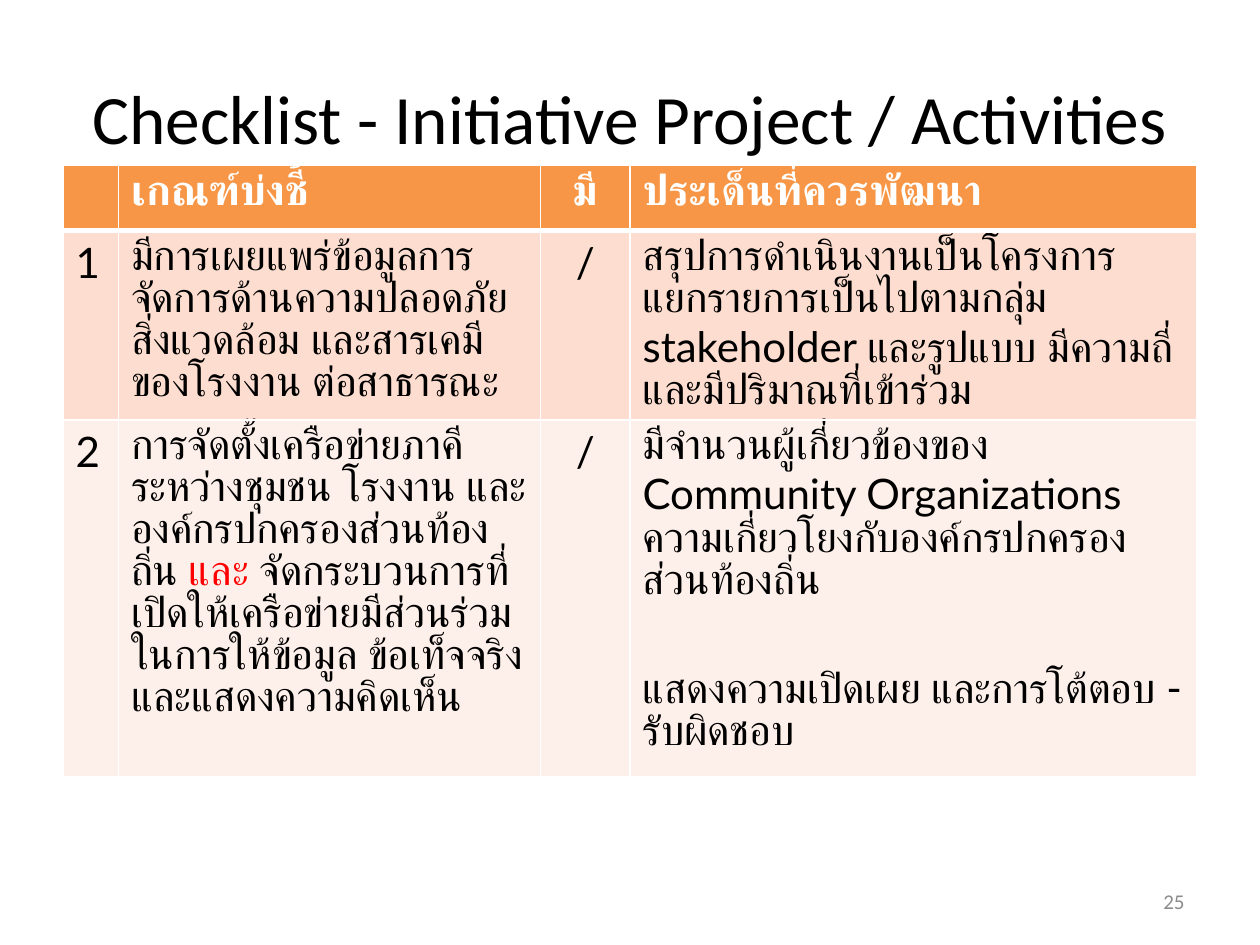
from dataclasses import dataclass

from lxml.etree import SubElement
from pptx import Presentation
from pptx.dml.color import RGBColor
from pptx.enum.text import MSO_ANCHOR, PP_ALIGN
from pptx.oxml.ns import qn
from pptx.util import Cm, Pt


@dataclass(frozen=True)
class Theme:
    heading_font: str = "Calibri"
    table_font: str = "Lato"
    title_size: float = 39.6
    table_size: float = 24
    number_size: float = 12
    paragraph_gap: float = 34
    ink: str = "000000"
    white: str = "FFFFFF"
    accent: str = "FF0000"
    muted: str = "8C8C8C"
    header_fill: str = "F79646"
    row_fills: tuple = ("FCDDCF", "FDEFE9")


class ChecklistSlide:
    def __init__(self, deck, theme):
        self.theme = theme
        self.slide = deck.slides.add_slide(deck.slide_layouts[5])

    def style(self, paragraph, font, size, color, align=PP_ALIGN.LEFT, bold=False):
        paragraph.alignment = align
        paragraph.font.name = font
        paragraph.font.size = Pt(size)
        paragraph.font.bold = bold
        paragraph.font.color.rgb = RGBColor.from_string(color)

    def title(self, wording, left, top, width, height):
        heading = self.slide.shapes.title
        heading.left, heading.top = Cm(left), Cm(top)
        heading.width, heading.height = Cm(width), Cm(height)
        frame = heading.text_frame
        frame.text = wording
        frame.vertical_anchor = MSO_ANCHOR.MIDDLE
        self.style(frame.paragraphs[0], self.theme.heading_font,
                   self.theme.title_size, self.theme.ink, PP_ALIGN.CENTER)

    def borders(self, cell, bottom_width):
        properties = cell._tc.get_or_add_tcPr()
        for side, width in (("L", 1), ("R", 1), ("T", 1), ("B", bottom_width)):
            line = SubElement(properties, qn(f"a:ln{side}"), w=str(Pt(width)))
            fill = SubElement(line, qn("a:solidFill"))
            SubElement(fill, qn("a:srgbClr"), val=self.theme.white)

    def cell(self, cell, paragraphs, fill, color, align, bold, bottom_width):
        """Each paragraph is a list of (wording, own colour or None) runs."""
        self.borders(cell, bottom_width)
        cell.fill.solid()
        cell.fill.fore_color.rgb = RGBColor.from_string(fill)
        frame = cell.text_frame
        for index, runs in enumerate(paragraphs):
            paragraph = frame.add_paragraph() if index else frame.paragraphs[0]
            self.style(paragraph, self.theme.table_font, self.theme.table_size,
                       color, align, bold)
            if index:
                paragraph.space_before = Pt(self.theme.paragraph_gap)
            for wording, own_color in runs:
                run = paragraph.add_run()
                run.text = wording
                if own_color:
                    run.font.color.rgb = RGBColor.from_string(own_color)

    def table(self, rows, left, top, widths, heights, centered):
        theme = self.theme
        checklist = self.slide.shapes.add_table(
            len(rows), len(widths), Cm(left), Cm(top),
            Cm(sum(widths)), Cm(sum(heights))).table
        checklist.horz_banding = False
        for column, width in zip(checklist.columns, widths):
            column.width = Cm(width)
        for r, (row, height) in enumerate(zip(rows, heights)):
            checklist.rows[r].height = Cm(height)
            header = r == 0
            fill = theme.header_fill if header else theme.row_fills[(r - 1) % 2]
            for c, content in enumerate(row):
                paragraphs = [[(content, None)]] if isinstance(content, str) else content
                self.cell(checklist.cell(r, c), paragraphs, fill,
                          theme.white if header else theme.ink,
                          PP_ALIGN.CENTER if c == centered else PP_ALIGN.LEFT,
                          header, 3 if header else 1)

    def page_number(self, number, left, top, width, height):
        box = self.slide.shapes.add_textbox(Cm(left), Cm(top), Cm(width), Cm(height))
        frame = box.text_frame
        frame.word_wrap = True
        frame.vertical_anchor = MSO_ANCHOR.MIDDLE
        frame.text = number
        self.style(frame.paragraphs[0], self.theme.heading_font,
                   self.theme.number_size, self.theme.muted, PP_ALIGN.RIGHT)


def main():
    deck = Presentation()
    deck.slide_width, deck.slide_height = Cm(25.4), Cm(19.05)
    theme = Theme()
    page = ChecklistSlide(deck, theme)

    # Heading
    page.title("Checklist - Initiative Project / Activities", 1.27, 0.76, 22.86, 3.18)

    # Criteria, whether they are met, and points to develop
    network_criterion = [[
        ("การจัดตั้งเครือข่ายภาคีระหว่างชุมชน โรงงาน และ องค์กรปกครองส่วนท้องถิ่น ", None),
        ("และ", theme.accent),
        (" จัดกระบวนการที่เปิดให้เครือข่ายมีส่วนร่วมในการให้ข้อมูล ข้อเท็จจริง "
         "และแสดงความคิดเห็น", None),
    ]]
    network_points = [
        [("มีจำนวนผู้เกี่ยวข้องของ Community Organizations "
          "ความเกี่ยวโยงกับองค์กรปกครองส่วนท้องถิ่น", None)],
        [("แสดงความเปิดเผย และการโต้ตอบ - รับผิดชอบ", None)],
    ]
    rows = [
        ("", "เกณฑ์บ่งชี้", "มี", "ประเด็นที่ควรพัฒนา"),
        ("1",
         "มีการเผยแพร่ข้อมูลการจัดการด้านความปลอดภัย สิ่งแวดล้อม และสารเคมี "
         "ของโรงงาน ต่อสาธารณะ",
         "/",
         "สรุปการดำเนินงานเป็นโครงการ แยกรายการเป็นไปตามกลุ่ม stakeholder "
         "และรูปแบบ มีความถี่และมีปริมาณที่เข้าร่วม"),
        ("2", network_criterion, "/", network_points),
    ]
    page.table(rows, 1.27, 3.33, widths=(1.12, 8.51, 1.8, 11.43),
               heights=(1.32, 3.81, 7.19), centered=2)

    # Footer
    page.page_number("25", 18.2, 17.66, 5.93, 1.01)

    deck.save("out.pptx")


if __name__ == "__main__":
    main()
